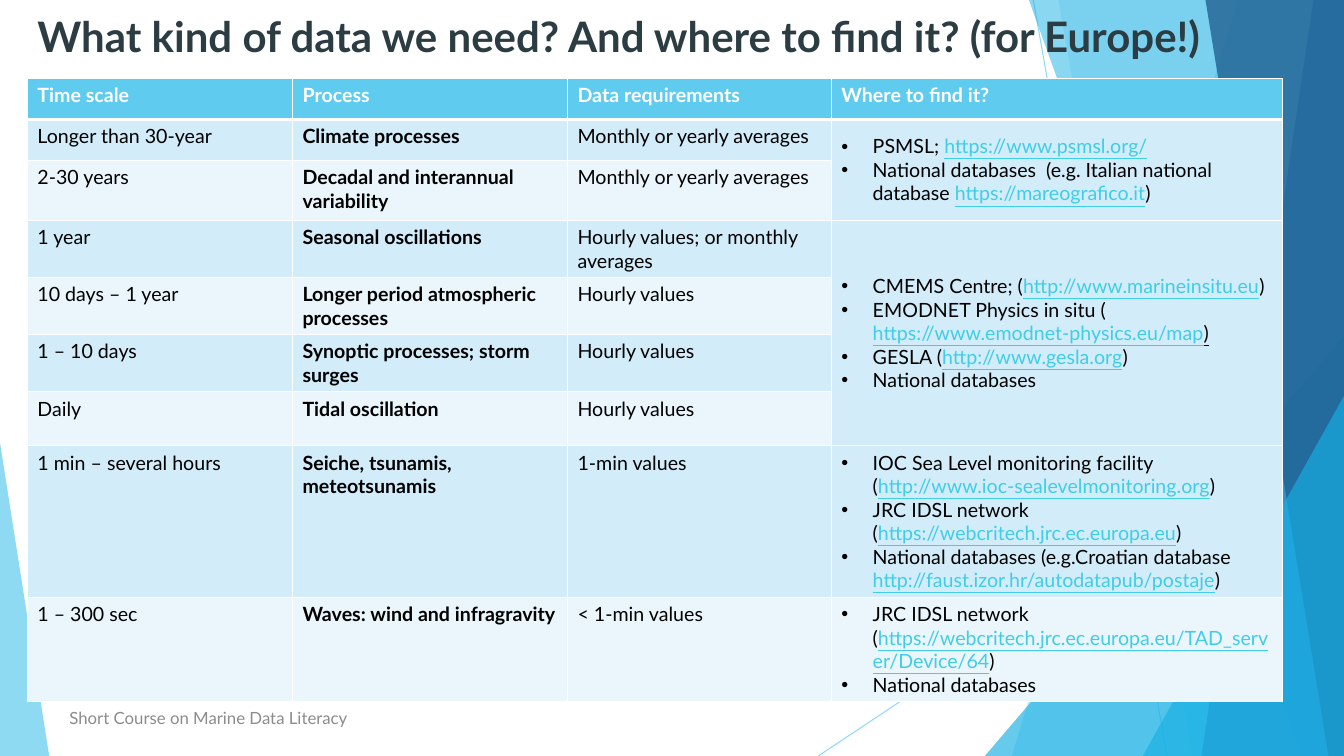
from lxml import etree
from pptx import Presentation
from pptx.dml.color import RGBColor
from pptx.enum.shapes import MSO_CONNECTOR, MSO_SHAPE
from pptx.enum.text import MSO_ANCHOR, MSO_AUTO_SIZE, PP_ALIGN
from pptx.oxml.ns import qn
from pptx.util import Cm, Pt

STRAIGHT = MSO_CONNECTOR.STRAIGHT
TRIANGLE = MSO_SHAPE.ISOSCELES_TRIANGLE
TOP, MIDDLE = MSO_ANCHOR.TOP, MSO_ANCHOR.MIDDLE
LEFT = PP_ALIGN.LEFT
NO_AUTOFIT = MSO_AUTO_SIZE.NONE

WHITE = RGBColor(0xFF, 0xFF, 0xFF)
BLACK = RGBColor(0x00, 0x00, 0x00)
SKY = RGBColor(0x5F, 0xCB, 0xEF)
AZURE = RGBColor(0x17, 0xB0, 0xE4)
BLUE = RGBColor(0x2E, 0x83, 0xC3)
NAVY = RGBColor(0x22, 0x62, 0x92)
SLATE = RGBColor(0x2C, 0x3C, 0x43)
GREY = RGBColor(0x8C, 0x8C, 0x8C)
LINK = RGBColor(0x3F, 0xCD, 0xE7)
BANDS = (RGBColor(0xD2, 0xEC, 0xF9), RGBColor(0xEA, 0xF6, 0xFC))

FONT = "Lato"
WIDTH, HEIGHT = 33.87, 19.05

COLUMN_WIDTHS = (6.68, 6.93, 6.65, 11.38)
ROW_HEIGHTS = (1.03, 1.03, 1.51, 1.44, 1.44, 1.44, 1.36, 3.81, 2.62)
HEADINGS = ("Time scale", "Process", "Data requirements", "Where to find it?")
PROCESSES = (
    ("Longer than 30-year", "Climate processes", "Monthly or yearly averages"),
    ("2-30 years", "Decadal and interannual variability", "Monthly or yearly averages"),
    ("1 year", "Seasonal oscillations", "Hourly values; or monthly averages"),
    ("10 days – 1 year", "Longer period atmospheric processes", "Hourly values"),
    ("1 – 10 days", "Synoptic processes; storm surges", "Hourly values"),
    ("Daily", "Tidal oscillation", "Hourly values"),
    ("1 min – several hours", "Seiche, tsunamis, meteotsunamis", "1-min values"),
    ("1 – 300 sec", "Waves: wind and infragravity", "< 1-min values"),
)
# First row, last row, then bullets as lead, link, tail and whether the tail is underlined
SOURCES = (
    (1, 2, (
        ("PSMSL; ", "https://www.psmsl.org/", "", False),
        ("National databases  (e.g. Italian national database ",
         "https://mareografico.it", ")", False))),
    (3, 6, (
        ("CMEMS Centre; (", "http://www.marineinsitu.eu", ")", False),
        ("EMODNET Physics in situ (", " https://www.emodnet-physics.eu/map", ")", True),
        ("GESLA (", "http://www.gesla.org", ")", False),
        ("National databases", "", "", False))),
    (7, 7, (
        ("IOC Sea Level monitoring facility (",
         "http://www.ioc-sealevelmonitoring.org", ")", False),
        ("JRC IDSL network (", "https://webcritech.jrc.ec.europa.eu", ")", False),
        ("National databases (e.g.Croatian database ",
         "http://faust.izor.hr/autodatapub/postaje", ")", False))),
    (8, 8, (
        ("JRC IDSL network (",
         "https://webcritech.jrc.ec.europa.eu/TAD_server/Device/64", ")", False),
        ("National databases", "", "", False))),
)


def add_run(paragraph, text, size, color, bold=False, underline=False):
    run = paragraph.add_run()
    run.text = text
    font = run.font
    font.name, font.size, font.bold, font.underline = FONT, Pt(size), bold, underline
    font.color.rgb = color


def set_opacity(shape, percent):
    for color in shape.element.iter(qn("a:srgbClr")):
        etree.SubElement(color, qn("a:alpha"), val=str(percent * 1000))


def paint(shape, color, opacity):
    shape.shadow.inherit = False
    shape.fill.solid()
    shape.fill.fore_color.rgb = color
    shape.line.fill.background()
    set_opacity(shape, opacity)


def add_ray(shapes, start, end):
    ray = shapes.add_connector(STRAIGHT, *map(Cm, start + end))
    ray.line.color.rgb = SKY
    ray.line.width = Pt(0.75)
    etree.SubElement(ray.element.spPr, qn("a:effectLst"))
    set_opacity(ray, 70)


def add_facet(shapes, top, bottom, color, opacity):
    """Fill from a slanted edge to the right side of the slide."""
    builder = shapes.build_freeform(Cm(top), 0)
    corners = ((WIDTH, 0), (WIDTH, HEIGHT), (bottom, HEIGHT))
    builder.add_line_segments([(Cm(x), Cm(y)) for x, y in corners], close=True)
    paint(builder.convert_to_shape(), color, opacity)


def add_triangle(shapes, left, top, width, apex, color, opacity):
    """Stand a triangle on the bottom edge of the slide."""
    triangle = shapes.add_shape(TRIANGLE, Cm(left), Cm(top), Cm(width), Cm(HEIGHT - top))
    triangle.adjustments[0] = apex
    paint(triangle, color, opacity)


def add_backdrop(slide):
    group = slide.shapes.add_group_shape()
    shapes = group.shapes
    add_ray(shapes, (26.04, 0), (29.41, HEIGHT))
    add_ray(shapes, (WIDTH, 10.24), (20.62, HEIGHT))
    add_facet(shapes, 31.19, 25.5, SKY, 36)
    add_facet(shapes, 26.67, 30.05, SKY, 20)
    add_triangle(shapes, 24.82, 8.46, 9.05, 1, AZURE, 66)
    add_facet(shapes, 25.93, 32.79, AZURE, 50)
    add_facet(shapes, 33.1, 30.28, BLUE, 70)
    add_facet(shapes, 30.38, 33.48, NAVY, 80)
    add_triangle(shapes, 28.8, 9.98, 5.07, 1, AZURE, 66)
    add_triangle(shapes, 0, 11.15, 1.24, 0, SKY, 70)
    slide.shapes.title.element.addprevious(group.element)


def add_title(slide, left, top, width, height):
    title = slide.shapes.title
    title.left, title.top, title.width, title.height = map(Cm, (left, top, width, height))
    frame = title.text_frame
    frame.vertical_anchor, frame.auto_size, frame.word_wrap = TOP, NO_AUTOFIT, True
    paragraph = frame.paragraphs[0]
    paragraph.alignment = LEFT
    add_run(paragraph, "What kind of data we need? And where to find it? (for Europe!)",
            30, SLATE, bold=True)


def style_cell(cell, color, bottom_width=1):
    properties = cell._tc.get_or_add_tcPr()
    for side, width in (("L", 1), ("R", 1), ("T", 1), ("B", bottom_width)):
        border = etree.SubElement(properties, qn("a:ln" + side), w=str(Pt(width)))
        fill = etree.SubElement(border, qn("a:solidFill"))
        etree.SubElement(fill, qn("a:srgbClr"), val=str(WHITE))
    cell.fill.solid()
    cell.fill.fore_color.rgb = color


def add_bullet(paragraph):
    properties = paragraph._p.get_or_add_pPr()
    properties.set("marL", str(Cm(0.79)))
    properties.set("indent", str(Cm(-0.79)))
    etree.SubElement(properties, qn("a:buFont"), typeface="Arial")
    etree.SubElement(properties, qn("a:buChar"), char="•")


def fill_sources(cell, bullets):
    frame = cell.text_frame
    for index, (lead, link, tail, underlined) in enumerate(bullets):
        paragraph = frame.add_paragraph() if index else frame.paragraphs[0]
        add_bullet(paragraph)
        runs = ((lead, BLACK, False), (link, LINK, True), (tail, BLACK, underlined))
        for text, color, underline in runs:
            if text:
                add_run(paragraph, text, 14, color, underline=underline)


def add_data_table(slide, left, top):
    table = slide.shapes.add_table(
        len(ROW_HEIGHTS), len(COLUMN_WIDTHS), Cm(left), Cm(top),
        Cm(sum(COLUMN_WIDTHS)), Cm(sum(ROW_HEIGHTS))).table
    for column, width in zip(table.columns, COLUMN_WIDTHS):
        column.width = Cm(width)
    for row, height in zip(table.rows, ROW_HEIGHTS):
        row.height = Cm(height)
    for column, heading in enumerate(HEADINGS):
        cell = table.cell(0, column)
        style_cell(cell, SKY, bottom_width=3)
        add_run(cell.text_frame.paragraphs[0], heading, 14, WHITE, bold=True)
    for row, texts in enumerate(PROCESSES, start=1):
        for column in range(len(HEADINGS)):
            style_cell(table.cell(row, column), BANDS[(row - 1) % 2])
        for column, text in enumerate(texts):
            paragraph = table.cell(row, column).text_frame.paragraphs[0]
            add_run(paragraph, text, 14, BLACK, bold=column == 1)
    for first, last, bullets in SOURCES:
        cell = table.cell(first, 3)
        if last > first:
            cell.merge(table.cell(last, 3))
            cell.vertical_anchor = MIDDLE
        fill_sources(cell, bullets)


def add_footer(slide, left, top, width, height):
    footer = slide.shapes.add_textbox(*map(Cm, (left, top, width, height)))
    frame = footer.text_frame
    frame.word_wrap, frame.vertical_anchor = True, MIDDLE
    add_run(frame.paragraphs[0], "Short Course on Marine Data Literacy", 12, GREY)


def main():
    presentation = Presentation()
    presentation.slide_width, presentation.slide_height = Cm(WIDTH), Cm(HEIGHT)
    slide = presentation.slides.add_slide(presentation.slide_layouts[5])
    add_backdrop(slide)
    add_title(slide, 0.69, 0.15, 32.51, 3.66)
    add_data_table(slide, 0.69, 1.98)
    add_footer(slide, 1.5, 17.58, 17.5, 1.02)
    presentation.save("out.pptx")


if __name__ == "__main__":
    main()
